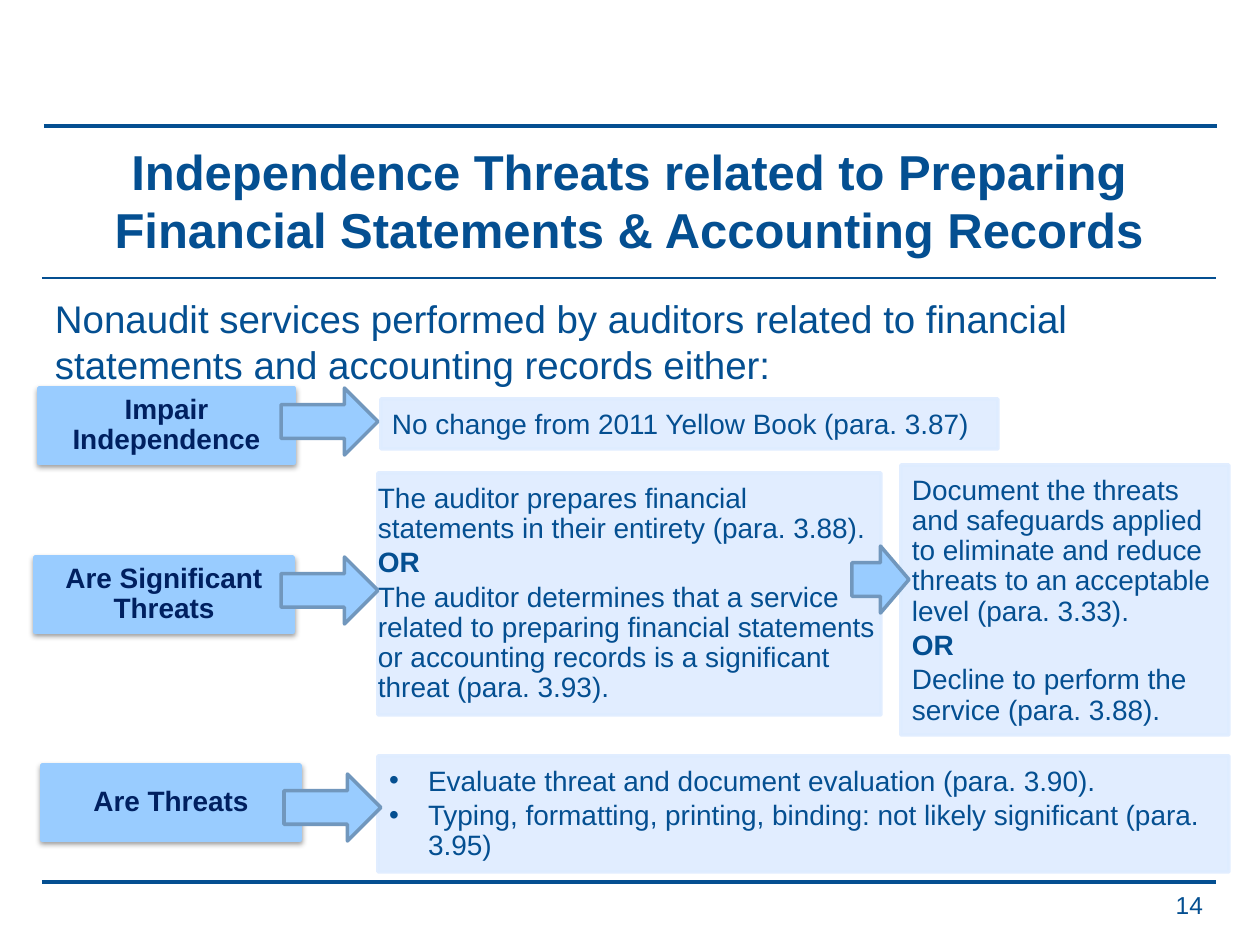
from lxml.etree import SubElement
from pptx import Presentation
from pptx.dml.color import RGBColor
from pptx.enum.shapes import MSO_CONNECTOR, MSO_SHAPE
from pptx.enum.text import MSO_ANCHOR, PP_ALIGN
from pptx.oxml.ns import qn
from pptx.util import Emu, Pt

EMU_PER_PX = 914400 / 126
FONT = "Arial"
COLORS = {
    "text": "044F91",
    "label_text": "002060",
    "label": "99CCFF",
    "panel": "DEECFF",
    "arrow_line": "7197BD",
    "shadow": "000000",
}

RULES = [(44, 126, 1217, 2.5), (42, 882, 1216, 2.5), (42, 278, 1216, 1.5)]
LABELS = [
    ("Impair Independence", (39, 388, 255, 75)),
    ("Are Significant Threats", (35, 557, 258, 75)),
    ("Are Threats", (42, 765, 258, 75)),
]
PANELS = [
    (["No change from 2011 Yellow Book (para. 3.87)"],
     (381, 399, 617, 50), (11, 11, 15, 18), False),
    (["The auditor prepares financial statements in their entirety (para. 3.88).",
      "OR",
      "The auditor determines that a service related to preparing financial "
      "statements or accounting records is a significant threat (para. 3.93)."],
     (378, 473, 503, 242), (0, 11, 0, 18), False),
    (["Document the threats and safeguards applied to eliminate and reduce "
      "threats to an acceptable level (para. 3.33).",
      "OR",
      "Decline to perform the service (para. 3.88)."],
     (901, 465, 328, 270), (11, 11, 15, 11), False),
    (["Evaluate threat and document evaluation (para. 3.90).",
      "Typing, formatting, printing, binding: not likely significant (para. 3.95)"],
     (378, 756, 851, 116), (11, 11, 15, 18), True),
]
ARROWS = [(281, 388, 97, 67), (281, 557, 97, 67), (284, 774, 97, 67), (852, 546, 57, 67)]


def px(value):
    return Emu(round(value * EMU_PER_PX))


def rgb(name):
    return RGBColor.from_string(COLORS[name])


def set_font(paragraph, size, color="text", bold=False):
    font = paragraph.font
    font.name = FONT
    font.size = Pt(size)
    font.bold = bold
    font.color.rgb = rgb(color)


def set_frame(frame, insets, anchor):
    frame.word_wrap = True
    frame.vertical_anchor = anchor
    (frame.margin_left, frame.margin_top,
     frame.margin_right, frame.margin_bottom) = map(px, insets)


def set_alpha(parent, percent):
    """Make every plain colour below parent partly transparent."""
    for color in parent.iter(qn("a:srgbClr")):
        SubElement(color, qn("a:alpha"), val=str(percent * 1000))


def add_bullet(paragraph, indent):
    properties = paragraph._p.get_or_add_pPr()
    properties.set("marL", str(px(indent)))
    properties.set("indent", str(-px(indent)))
    SubElement(properties, qn("a:buFont"), typeface=FONT)
    SubElement(properties, qn("a:buChar"), char="•")


def add_soft_shadow(shape):
    effects = shape._element.spPr.find(qn("a:effectLst"))
    shadow = SubElement(effects, qn("a:outerShdw"), blurRad="40000", dist="20000",
                        dir="5400000", rotWithShape="0")
    SubElement(shadow, qn("a:srgbClr"), val=COLORS["shadow"])
    set_alpha(shadow, 38)


def add_rule(slide, left, top, right, width):
    line = slide.shapes.add_connector(
        MSO_CONNECTOR.STRAIGHT, px(left), px(top), px(right), px(top))
    line.line.color.rgb = rgb("text")
    line.line.width = Pt(width)
    SubElement(line._element.spPr, qn("a:effectLst"))


def add_text(slide, text, box, size, align, anchor, bold=False):
    frame = slide.shapes.add_textbox(*map(px, box)).text_frame
    set_frame(frame, (13, 6, 13, 6), anchor)
    paragraph = frame.paragraphs[0]
    paragraph.text = text
    paragraph.alignment = align
    set_font(paragraph, size, bold=bold)


def add_filled_shape(slide, kind, box, fill, line):
    shape = slide.shapes.add_shape(kind, *map(px, box))
    shape.fill.solid()
    shape.fill.fore_color.rgb = rgb(fill)
    shape.line.color.rgb = rgb(line)
    shape.line.width = Pt(2)
    shape.shadow.inherit = False
    return shape


def add_label(slide, text, box):
    shape = add_filled_shape(slide, MSO_SHAPE.RECTANGLE, box, "label", "label")
    add_soft_shadow(shape)
    set_frame(shape.text_frame, (15, 9, 15, 9), MSO_ANCHOR.MIDDLE)
    paragraph = shape.text_frame.paragraphs[0]
    paragraph.text = text
    paragraph.alignment = PP_ALIGN.CENTER
    paragraph.line_spacing = 0.9
    set_font(paragraph, 16, "label_text", bold=True)


def add_panel(slide, texts, box, insets, bulleted):
    shape = add_filled_shape(slide, MSO_SHAPE.RECTANGLE, box, "panel", "panel")
    set_alpha(shape._element.spPr, 90)
    frame = shape.text_frame
    set_frame(frame, insets, MSO_ANCHOR.TOP)
    for index, text in enumerate(texts):
        paragraph = frame.add_paragraph() if index else frame.paragraphs[0]
        paragraph.text = text
        paragraph.alignment = PP_ALIGN.LEFT
        paragraph.line_spacing = 0.9
        paragraph.space_after = Pt(2.4)
        if bulleted:
            add_bullet(paragraph, 39)
        set_font(paragraph, 16, bold=text == "OR")


def main():
    presentation = Presentation()
    presentation.slide_width = px(1260)
    presentation.slide_height = px(945)
    slide = presentation.slides.add_slide(presentation.slide_layouts[6])

    for rule in RULES:
        add_rule(slide, *rule)
    add_text(slide, "Independence Threats related to Preparing Financial Statements "
             "& Accounting Records", (42, 137, 1174, 126), 28,
             PP_ALIGN.CENTER, MSO_ANCHOR.MIDDLE, bold=True)
    add_text(slide, "Nonaudit services performed by auditors related to financial "
             "statements and accounting records either:", (42, 289, 1174, 582), 22,
             PP_ALIGN.LEFT, MSO_ANCHOR.TOP)
    add_text(slide, "14", (922, 883, 294, 44), 14, PP_ALIGN.RIGHT, MSO_ANCHOR.MIDDLE)

    for label in LABELS:
        add_label(slide, *label)
    for panel in PANELS:
        add_panel(slide, *panel)
    for box in ARROWS:
        add_filled_shape(slide, MSO_SHAPE.RIGHT_ARROW, box, "label", "arrow_line")

    presentation.save("out.pptx")


if __name__ == "__main__":
    main()
